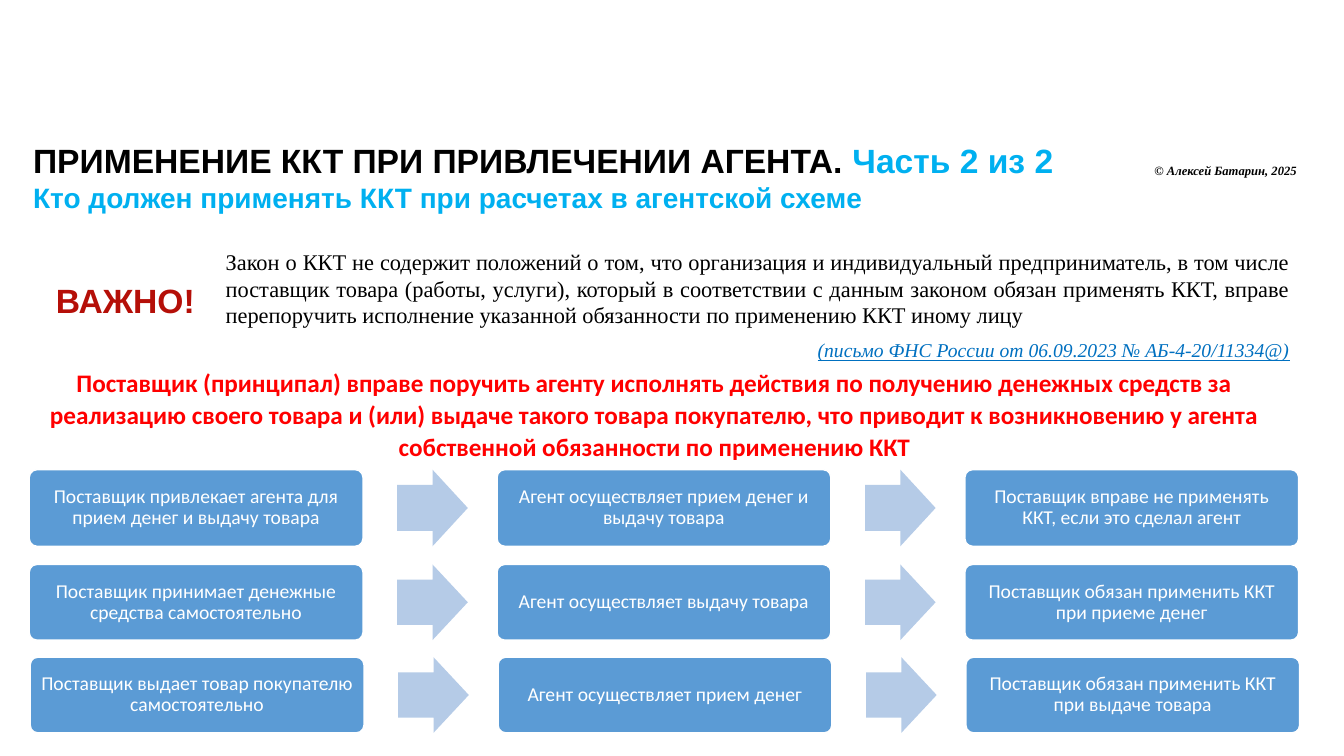
from pptx import Presentation
from pptx.dml.color import RGBColor
from pptx.enum.shapes import MSO_SHAPE
from pptx.enum.text import MSO_ANCHOR, PP_ALIGN
from pptx.util import Inches, Pt


def color(value):
    return RGBColor.from_string(value)


class SlideBuilder:
    heading_font = "Arial"
    body_font = "Times New Roman"
    scheme_font = "Calibri"
    black = "000000"
    white = "FFFFFF"
    accent = "00B0F0"
    warning = "B50F08"
    reference = "0070C0"
    conclusion = "FF0000"
    step_fill = "5B9BD5"
    arrow_fill = "B5CBE7"

    def __init__(self, slide):
        self.slide = slide

    def format_run(self, run, font_name, size, font_color, bold=False, italic=False, underline=False):
        font = run.font
        font.name = font_name
        font.size = Pt(size)
        font.color.rgb = color(font_color)
        font.bold = bold
        font.italic = italic
        font.underline = underline

    def text_box(self, left, top, width, height, paragraphs):
        shape = self.slide.shapes.add_textbox(Inches(left), Inches(top), Inches(width), Inches(height))
        text_frame = shape.text_frame
        text_frame.word_wrap = True
        for index, (alignment, runs) in enumerate(paragraphs):
            paragraph = text_frame.add_paragraph() if index else text_frame.paragraphs[0]
            paragraph.alignment = alignment
            for text, style in runs:
                run = paragraph.add_run()
                run.text = text
                self.format_run(run, **style)
        return text_frame

    def preset(self, kind, left, top, width, height, fill):
        shape = self.slide.shapes.add_shape(kind, Inches(left), Inches(top), Inches(width), Inches(height))
        shape.shadow.inherit = False
        shape.fill.solid()
        shape.fill.fore_color.rgb = color(fill)
        shape.line.fill.background()
        return shape

    def step(self, left, top, width, height, text):
        shape = self.preset(MSO_SHAPE.ROUNDED_RECTANGLE, left, top, width, height, self.step_fill)
        shape.adjustments[0] = 0.1
        shape.line.color.rgb = color(self.white)
        shape.line.width = Pt(1)
        text_frame = shape.text_frame
        text_frame.text = text
        text_frame.word_wrap = True
        text_frame.vertical_anchor = MSO_ANCHOR.MIDDLE
        text_frame.margin_left = text_frame.margin_right = Inches(0.08)
        text_frame.margin_top = text_frame.margin_bottom = Inches(0.08)
        paragraph = text_frame.paragraphs[0]
        paragraph.alignment = PP_ALIGN.CENTER
        paragraph.line_spacing = 0.9
        self.format_run(paragraph.runs[0], self.scheme_font, 14, self.white)

    def arrow(self, left, top, width, height):
        shape = self.preset(MSO_SHAPE.RIGHT_ARROW, left, top, width, height, self.arrow_fill)
        shape.adjustments[0] = 0.6
        shape.adjustments[1] = 0.5

    def scheme_row(self, left, top, height, texts):
        pitch = 4.64
        for index, text in enumerate(texts):
            step_left = left + index * pitch
            self.step(step_left, top, 3.31, height, text)
            if index < len(texts) - 1:
                self.arrow(step_left + 3.65, top, 0.7, height)


def style(font_name, size, font_color, **options):
    return dict(font_name=font_name, size=size, font_color=font_color, **options)


def main():
    presentation = Presentation()
    presentation.slide_width = Inches(13.33)
    presentation.slide_height = Inches(7.5)
    builder = SlideBuilder(presentation.slides.add_slide(presentation.slide_layouts[6]))
    heading, body = builder.heading_font, builder.body_font

    builder.text_box(0.23, 1.34, 11.12, 0.62, [
        (PP_ALIGN.LEFT, [
            ("ПРИМЕНЕНИЕ ККТ ПРИ ПРИВЛЕЧЕНИИ АГЕНТА. ", style(heading, 24, builder.black, bold=True)),
            ("Часть 2 из 2", style(heading, 24, builder.accent, bold=True)),
        ]),
        (PP_ALIGN.LEFT, [
            ("Кто должен применять ККТ при расчетах в агентской схеме",
             style(heading, 20, builder.accent, bold=True)),
        ]),
    ])
    builder.text_box(11.35, 1.57, 1.69, 0.25, [
        (PP_ALIGN.LEFT, [("© Алексей Батарин, 2025", style(body, 9, builder.black, bold=True, italic=True))]),
    ])
    builder.text_box(0.44, 2.73, 1.7, 0.51, [
        (PP_ALIGN.CENTER, [("ВАЖНО! ", style(heading, 24, builder.warning, bold=True))]),
    ])
    law_frame = builder.text_box(2.14, 2.41, 10.75, 1.25, [
        (PP_ALIGN.JUSTIFY, [
            ("Закон о ККТ не содержит положений о том, что организация и индивидуальный предприниматель, "
             "в том числе поставщик товара (работы, услуги), который в соответствии с данным законом обязан "
             "применять ККТ, вправе перепоручить исполнение указанной обязанности по применению ККТ иному лицу",
             style(body, 16, builder.black)),
        ]),
        (PP_ALIGN.RIGHT, [
            ("(письмо ФНС России от 06.09.2023 № АБ-4-20/11334@)",
             style(body, 14, builder.reference, italic=True, underline=True)),
        ]),
    ])
    law_frame.paragraphs[1].space_before = Pt(7)
    conclusion_frame = builder.text_box(0.1, 3.57, 12.78, 1.07, [
        (PP_ALIGN.CENTER, [
            ("Поставщик (принципал) вправе поручить агенту исполнять действия по получению денежных средств "
             "за реализацию своего товара и (или) выдаче такого товара покупателю, что приводит к "
             "возникновению у агента собственной обязанности по применению ККТ",
             style(builder.scheme_font, 18, builder.conclusion, bold=True)),
        ]),
    ])
    conclusion_frame.paragraphs[0].line_spacing = 1.07

    scheme_rows = [
        (0.29, 4.66, 0.76, [
            "Поставщик привлекает агента для прием денег и выдачу товара",
            "Агент осуществляет прием денег и выдачу товара",
            "Поставщик вправе не применять ККТ, если это сделал агент",
        ]),
        (0.29, 5.6, 0.75, [
            "Поставщик принимает денежные средства самостоятельно",
            "Агент осуществляет выдачу товара",
            "Поставщик обязан применить ККТ при приеме денег",
        ]),
        (0.3, 6.52, 0.75, [
            "Поставщик выдает товар покупателю самостоятельно",
            "Агент осуществляет прием денег",
            "Поставщик обязан применить ККТ при выдаче товара",
        ]),
    ]
    for left, top, height, texts in scheme_rows:
        builder.scheme_row(left, top, height, texts)

    presentation.save("out.pptx")


if __name__ == "__main__":
    main()
